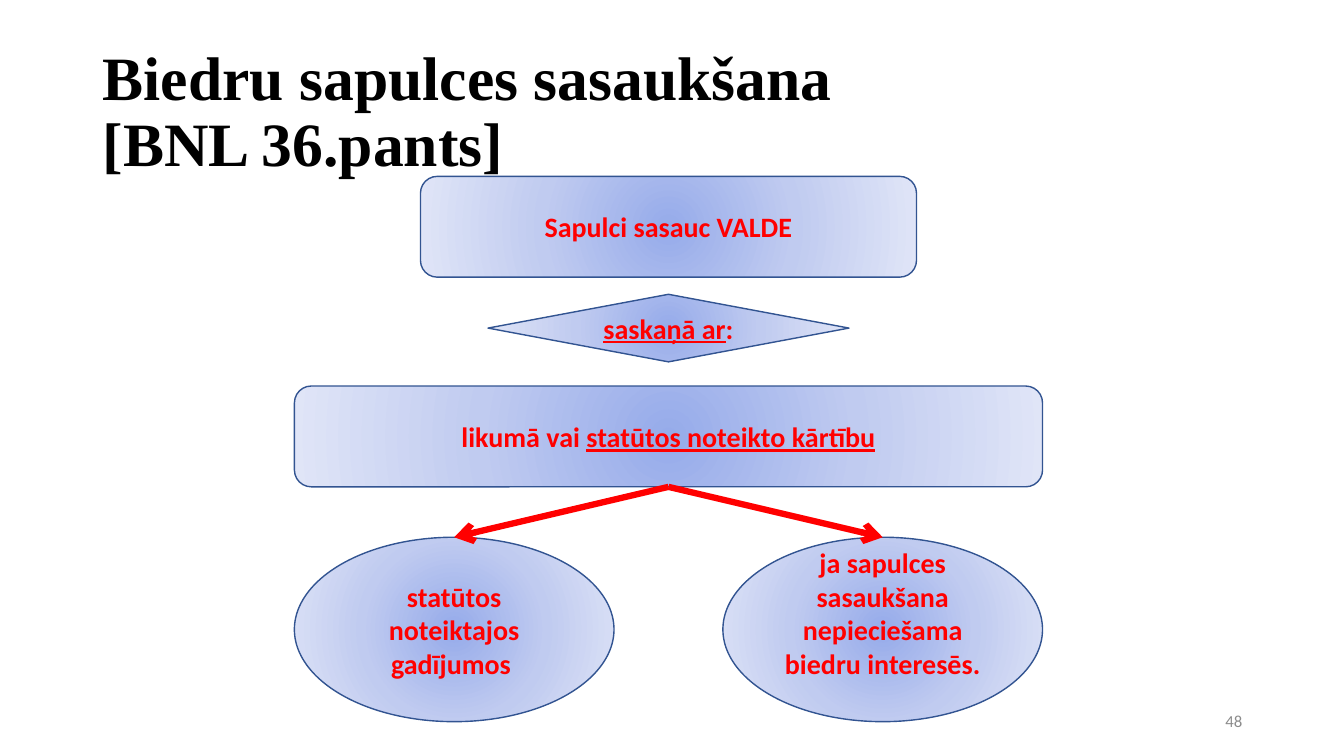
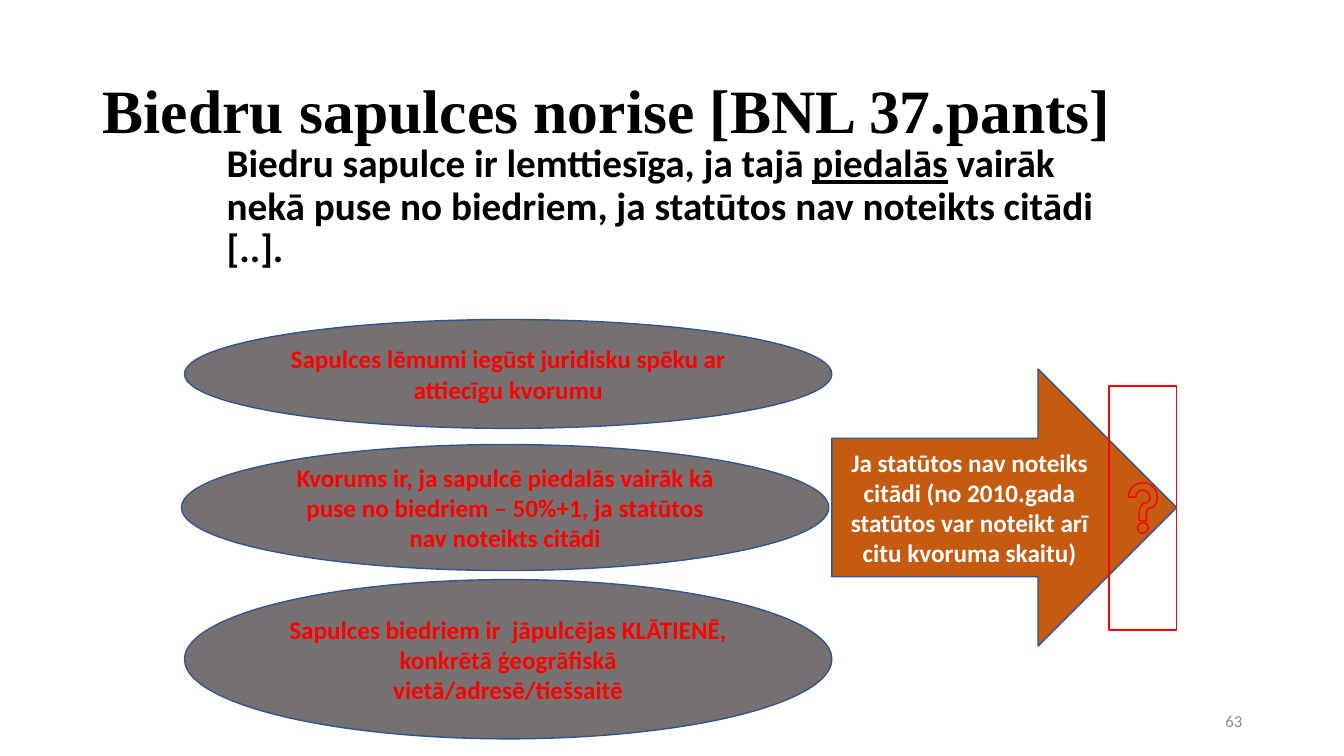
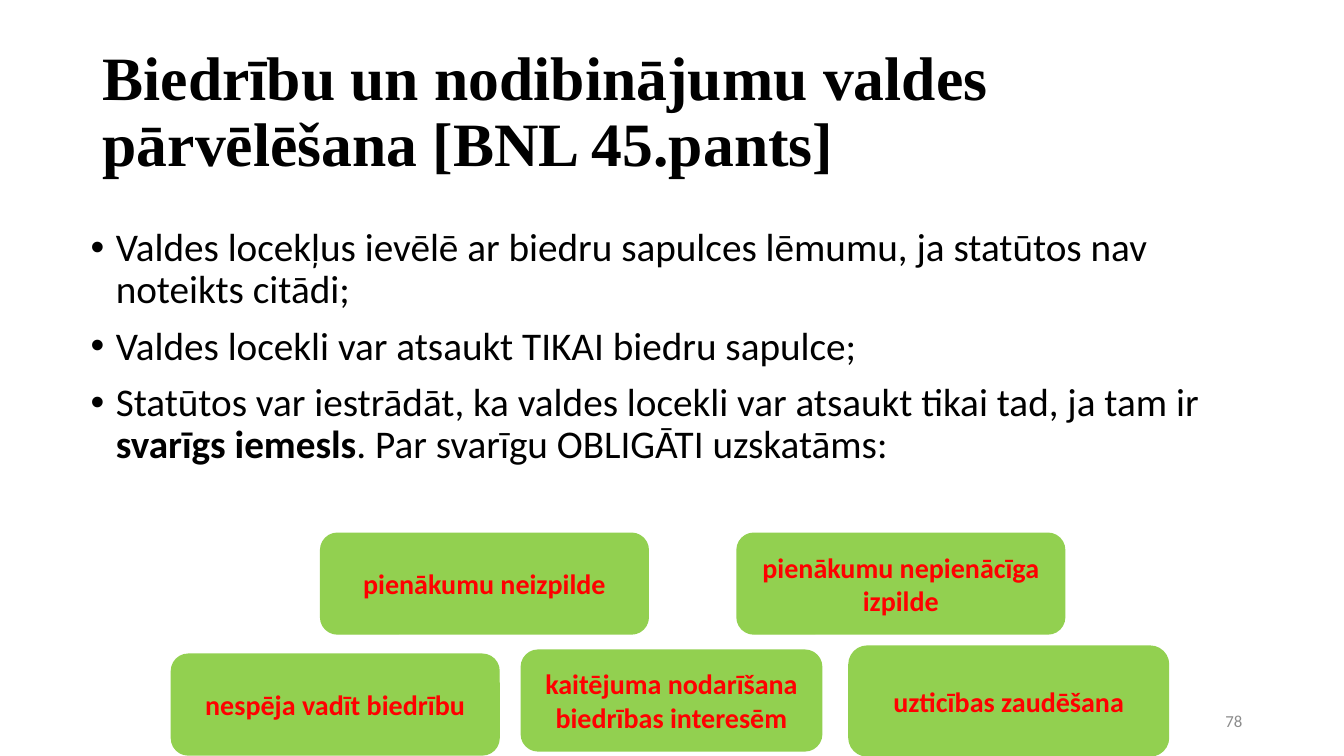
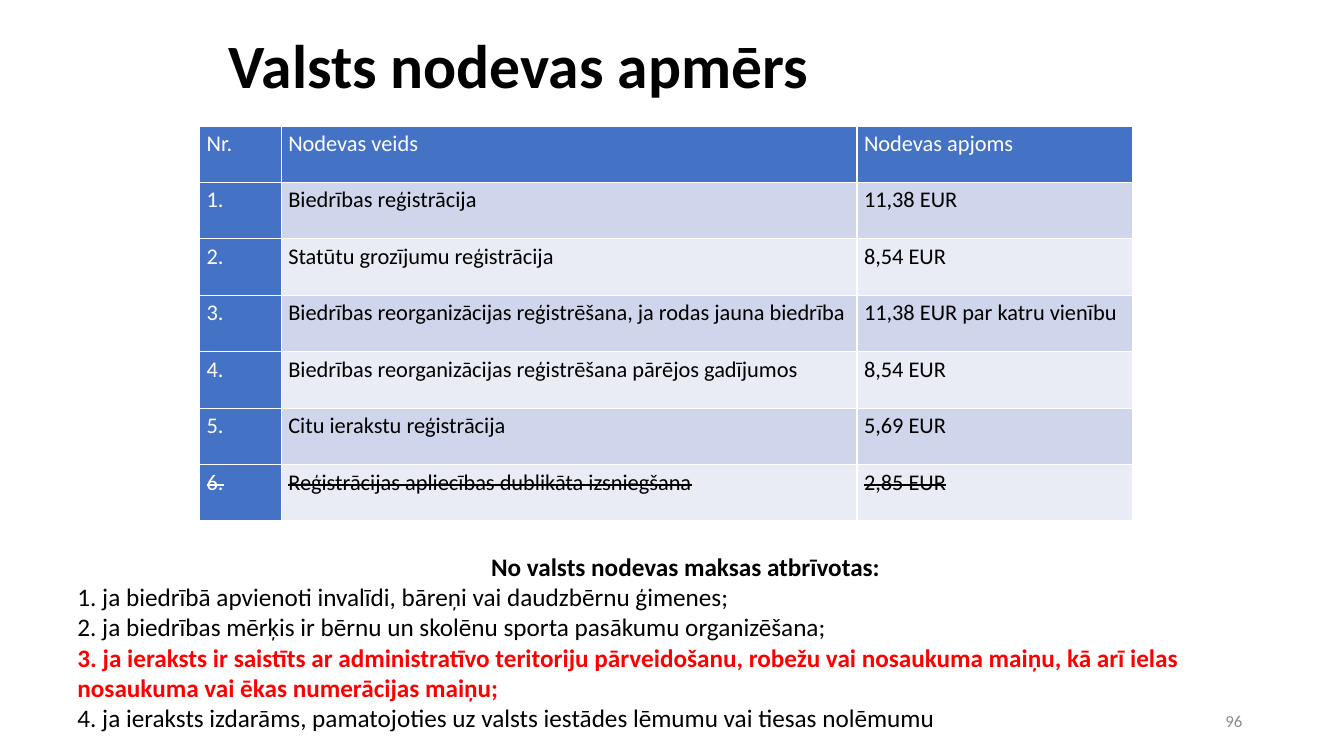
from lxml import etree
from pptx import Presentation
from pptx.dml.color import RGBColor
from pptx.enum.shapes import MSO_CONNECTOR, MSO_SHAPE
from pptx.enum.text import MSO_ANCHOR, PP_ALIGN
from pptx.oxml import parse_xml
from pptx.oxml.ns import nsdecls, qn
from pptx.util import Inches, Pt

STRAIGHT = MSO_CONNECTOR.STRAIGHT
STEP = MSO_SHAPE.FLOWCHART_ALTERNATE_PROCESS
DECISION = MSO_SHAPE.FLOWCHART_DECISION
CASE = MSO_SHAPE.FLOWCHART_CONNECTOR
OVAL = MSO_SHAPE.OVAL
RIGHT_ARROW = MSO_SHAPE.RIGHT_ARROW
HELP_BUTTON = MSO_SHAPE.ACTION_BUTTON_HELP
ROUNDED = MSO_SHAPE.ROUNDED_RECTANGLE
TOP, MIDDLE = MSO_ANCHOR.TOP, MSO_ANCHOR.MIDDLE
LEFT, CENTER, RIGHT = PP_ALIGN.LEFT, PP_ALIGN.CENTER, PP_ALIGN.RIGHT

BLACK = RGBColor(0x00, 0x00, 0x00)
WHITE = RGBColor(0xFF, 0xFF, 0xFF)
RED = RGBColor(0xFF, 0x00, 0x00)
NUMBER_GRAY = RGBColor(0x8C, 0x8C, 0x8C)
OUTLINE_BLUE = RGBColor(0x32, 0x54, 0x91)
OVAL_GRAY = RGBColor(0x76, 0x71, 0x71)
ORANGE = RGBColor(0xC5, 0x5A, 0x11)
GREEN = RGBColor(0x92, 0xD0, 0x50)
HEADER_BLUE = RGBColor(0x44, 0x72, 0xC4)
BAND_DARK = RGBColor(0xCF, 0xD5, 0xEA)
BAND_LIGHT = RGBColor(0xE9, 0xEB, 0xF5)
GLOW = (
    (0, RGBColor(0x96, 0xAB, 0xEA)),
    (50, RGBColor(0xC0, 0xCB, 0xF0)),
    (100, RGBColor(0xE0, 0xE5, 0xF7)),
)

BODY_FONT = "Calibri"
TITLE_FONT = "Times New Roman"
TITLE_BOX = (0.92, 0.4, 11.5, 1.45)
NUMBER_BOX = (9.42, 6.95, 3, 0.4)


def inches(*lengths):
    return [Inches(round(length, 2)) for length in lengths]


def style_run(run, size, color, font=BODY_FONT, bold=False, underline=False, strike=False):
    run.font.name = font
    run.font.size = Pt(size)
    run.font.color.rgb = color
    run.font.bold = bold
    if underline:
        run.font.underline = True
    if strike:
        run.font._element.set("strike", "sngStrike")


def write(frame, paragraphs, align=LEFT, anchor=TOP, spacing=None, before=None,
          bullet=None, **run_format):
    frame.word_wrap = True
    frame.vertical_anchor = anchor
    for index, runs in enumerate(paragraphs):
        paragraph = frame.add_paragraph() if index else frame.paragraphs[0]
        paragraph.alignment = align
        if spacing:
            paragraph.line_spacing = spacing
        if before is not None:
            paragraph.space_before = Pt(before)
        if bullet:
            properties = paragraph._p.get_or_add_pPr()
            properties.set("marL", str(Inches(0.25)))
            properties.set("indent", str(-Inches(0.25)))
            etree.SubElement(properties, qn("a:buFont")).set("typeface", "Arial")
            etree.SubElement(properties, qn("a:buChar")).set("char", bullet)
        for run_text, changes in [(runs, {})] if isinstance(runs, str) else runs:
            for line_index, line in enumerate(run_text.split("\n")):
                if line_index:
                    paragraph.add_line_break()
                run = paragraph.add_run()
                run.text = line
                style_run(run, **{**run_format, **changes})


def add_text(slide, box, paragraphs, **text_format):
    frame = slide.shapes.add_textbox(*inches(*box)).text_frame
    write(frame, paragraphs, **text_format)
    return frame


def add_block(slide, kind, box, text=None, fill=None, line=OUTLINE_BLUE, size=20, color=RED):
    block = slide.shapes.add_shape(kind, *inches(*box))
    block.shadow.inherit = False
    block.line.color.rgb = line
    block.line.width = Pt(1)
    if fill is None:
        block.fill.background()
    elif fill is GLOW:
        glow_fill(block)
    else:
        block.fill.solid()
        block.fill.fore_color.rgb = fill
    if text:
        write(block.text_frame, [text], align=CENTER, anchor=MIDDLE,
              size=size, color=color, bold=True)
    return block


def glow_fill(block):
    block.fill.solid()
    stops = "".join(
        f'<a:gs pos="{position * 1000}"><a:srgbClr val="{color}"/></a:gs>'
        for position, color in GLOW
    )
    gradient = parse_xml(
        f'<a:gradFill {nsdecls("a")} rotWithShape="1"><a:gsLst>{stops}</a:gsLst>'
        '<a:path path="circle"><a:fillToRect l="50000" t="50000" r="50000" b="50000"/>'
        "</a:path></a:gradFill>"
    )
    properties = block._element.spPr
    properties.replace(properties.find(qn("a:solidFill")), gradient)


def add_arrow(slide, source, target):
    arrow = slide.shapes.add_connector(STRAIGHT, 0, 0, 0, 0)
    arrow.begin_connect(source, 2)
    arrow.end_connect(target, 0)
    arrow.line.color.rgb = RED
    arrow.line.width = Pt(4.5)
    etree.SubElement(arrow.line._get_or_add_ln(), qn("a:tailEnd")).set("type", "arrow")
    etree.SubElement(arrow._element.spPr, qn("a:effectLst"))


def new_slide(deck, title, number, title_box=TITLE_BOX, title_font=TITLE_FONT):
    slide = deck.slides.add_slide(deck.slide_layouts[6])
    add_text(slide, title_box, [title], anchor=MIDDLE, spacing=0.9,
             size=44, color=BLACK, font=title_font, bold=True)
    add_text(slide, NUMBER_BOX, [str(number)], align=RIGHT, anchor=MIDDLE,
             size=12, color=NUMBER_GRAY)
    return slide


def add_convening_flow(slide, left, top, width):
    underlined = {"underline": True}
    steps = [
        (STEP, 0, 4.92, 1, "Sapulci sasauc VALDE"),
        (DECISION, 1.17, 3.58, 0.67, [("saskaņā ar", underlined), (":", {})]),
        (STEP, 2.08, width, 1,
         [("likumā vai ", {}), ("statūtos noteikto kārtību", underlined)]),
    ]
    for kind, offset, step_width, height, text in steps:
        box = (left + (width - step_width) / 2, top + offset, step_width, height)
        procedure = add_block(slide, kind, box, text, GLOW)

    case_width = 3.17
    cases = [
        (left, "statūtos noteiktajos gadījumos ", 0.05),
        (left + width - case_width, "ja sapulces sasaukšana nepieciešama biedru interesēs.", 0.38),
    ]
    for case_left, text, bottom_margin in cases:
        case = add_block(slide, CASE, (case_left, top + 3.58, case_width, 1.83), text, GLOW)
        case.text_frame.margin_bottom = Inches(bottom_margin)
        add_arrow(slide, procedure, case)


def add_quorum_rules(slide, left, top, width):
    rules = [
        (0.03, 0, 1.08, "Sapulces lēmumi iegūst juridisku spēku ar attiecīgu kvorumu"),
        (0, 1.24, 1.25, "Kvorums ir, ja sapulcē piedalās vairāk kā puse no biedriem – 50%+1, "
                        "ja statūtos nav noteikts citādi"),
        (0.03, 2.58, 1.58, "Sapulces biedriem ir  jāpulcējas KLĀTIENĒ, konkrētā ģeogrāfiskā "
                           "vietā/adresē/tiešsaitē"),
    ]
    for indent, offset, height, text in rules:
        add_block(slide, OVAL, (left + indent, top + offset, 6.42, height),
                  text, OVAL_GRAY, size=18)
    right = left + width
    add_block(slide, RIGHT_ARROW, (right - 3.42, top + 0.49, 3.42, 2.75),
              "Ja statūtos nav noteiks citādi (no 2010.gada statūtos var noteikt arī "
              "citu kvoruma skaitu)", ORANGE, size=18, color=WHITE)
    add_block(slide, HELP_BUTTON, (right - 0.67, top + 0.66, 0.67, 2.42), line=RED)


def add_reasons(slide, left, top):
    reasons = [
        (1.48, 0, 3.25, 1, "pienākumu neizpilde"),
        (5.61, 0, 3.25, 1, "pienākumu nepienācīga izpilde"),
        (0, 1.2, 3.25, 1, "nespēja vadīt biedrību"),
        (3.47, 1.16, 2.98, 1, "kaitējuma nodarīšana biedrības interesēm"),
        (6.72, 1.12, 3.17, 1.09, "uzticības zaudēšana"),
    ]
    for across, down, width, height, text in reasons:
        add_block(slide, ROUNDED, (left + across, top + down, width, height),
                  text, GREEN, line=GREEN)


def border_cell(cell):
    properties = cell._tc.get_or_add_tcPr()
    for position, side in enumerate(("lnL", "lnR", "lnT", "lnB")):
        properties.insert(position, parse_xml(
            f'<a:{side} {nsdecls("a")} w="{Pt(1)}"><a:solidFill>'
            f'<a:srgbClr val="{WHITE}"/></a:solidFill></a:{side}>'
        ))


def add_fee_table(slide, left, top, column_widths, row_height):
    fees = [
        ("Nr.", "Nodevas veids", "Nodevas apjoms"),
        ("1.", "Biedrības reģistrācija", "11,38 EUR"),
        ("2.", "Statūtu grozījumu reģistrācija", "8,54 EUR"),
        ("3.", "Biedrības reorganizācijas reģistrēšana, ja rodas jauna biedrība",
         "11,38 EUR par katru vienību"),
        ("4.", "Biedrības reorganizācijas reģistrēšana pārējos gadījumos", "8,54 EUR"),
        ("5.", "Citu ierakstu reģistrācija", "5,69 EUR"),
        ("6.", "Reģistrācijas apliecības dublikāta izsniegšana", "2,85 EUR"),
    ]
    box = inches(left, top, sum(column_widths), row_height * len(fees))
    table = slide.shapes.add_table(len(fees), len(column_widths), *box).table
    for column, width in zip(table.columns, column_widths):
        column.width = Inches(width)
    for row_index, fee in enumerate(fees):
        table.rows[row_index].height = Inches(row_height)
        for column_index, text in enumerate(fee):
            cell = table.cell(row_index, column_index)
            heading = row_index == 0 or column_index == 0
            band = BAND_DARK if row_index % 2 else BAND_LIGHT
            cell.fill.solid()
            cell.fill.fore_color.rgb = HEADER_BLUE if heading else band
            cell.margin_left = cell.margin_right = Inches(0.07)
            cell.margin_top = cell.margin_bottom = 0
            border_cell(cell)
            write(cell.text_frame, [text], spacing=1.15, size=16,
                  color=WHITE if heading else BLACK,
                  strike=row_index == len(fees) - 1)


def build_convening(deck):
    slide = new_slide(deck, "Biedru sapulces sasaukšana \n[BNL 36.pants]", 48)
    add_convening_flow(slide, 2.92, 1.75, 7.42)


def build_quorum(deck):
    slide = new_slide(deck, "Biedru sapulces norise [BNL 37.pants]", 63)
    statement = [
        ("Biedru sapulce ir lemttiesīga, ja tajā ", {}),
        ("piedalās", {"underline": True}),
        (" vairāk nekā puse no biedriem, ja statūtos nav noteikts citādi [..].", {}),
    ]
    add_text(slide, (2.15, 1.38, 9, 1.79), [statement], spacing=0.9, before=10,
             size=28, color=BLACK, bold=True)
    add_quorum_rules(slide, 1.8, 3.17, 9.87)


def build_board(deck):
    slide = new_slide(deck, "Biedrību un nodibinājumu valdes pārvēlēšana [BNL 45.pants]", 78)
    points = [
        "Valdes locekļus ievēlē ar biedru sapulces lēmumu, ja statūtos nav noteikts citādi;",
        "Valdes locekli var atsaukt TIKAI biedru sapulce;",
        [
            ("Statūtos var iestrādāt, ka valdes locekli var atsaukt tikai tad, ja tam ir ", {}),
            ("svarīgs iemesls", {"bold": True}),
            (". Par svarīgu OBLIGĀTI uzskatāms:", {}),
        ],
    ]
    add_text(slide, (0.8, 2.21, 11.94, 3.21), points, spacing=0.9, before=10,
             bullet="•", size=28, color=BLACK)
    add_reasons(slide, 1.7, 5.29)


def build_fees(deck):
    slide = new_slide(deck, "Valsts nodevas apmērs", 96, (2.17, 0.13, 9, 1.1), BODY_FONT)
    add_fee_table(slide, 1.98, 1.25, (0.81, 5.71, 2.73), 0.56)
    exemptions = [
        [("No valsts nodevas maksas atbrīvotas:", {"bold": True})],
        "1. ja biedrībā apvienoti invalīdi, bāreņi vai daudzbērnu ģimenes;",
        "2. ja biedrības mērķis ir bērnu un skolēnu sporta pasākumu organizēšana;",
        [("3. ja ieraksts ir saistīts ar administratīvo teritoriju pārveidošanu, robežu vai "
          "nosaukuma maiņu, kā arī ielas nosaukuma vai ēkas numerācijas maiņu;",
          {"bold": True, "color": RED})],
        "4. ja ieraksts izdarāms, pamatojoties uz valsts iestādes lēmumu vai tiesas nolēmumu",
    ]
    frame = add_text(slide, (0.67, 5.42, 12.26, 1.92), exemptions, size=18, color=BLACK)
    frame.paragraphs[0].alignment = CENTER


def main():
    deck = Presentation()
    deck.slide_width, deck.slide_height = inches(13.33, 7.5)
    for build in (build_convening, build_quorum, build_board, build_fees):
        build(deck)
    deck.save("out.pptx")


if __name__ == "__main__":
    main()
